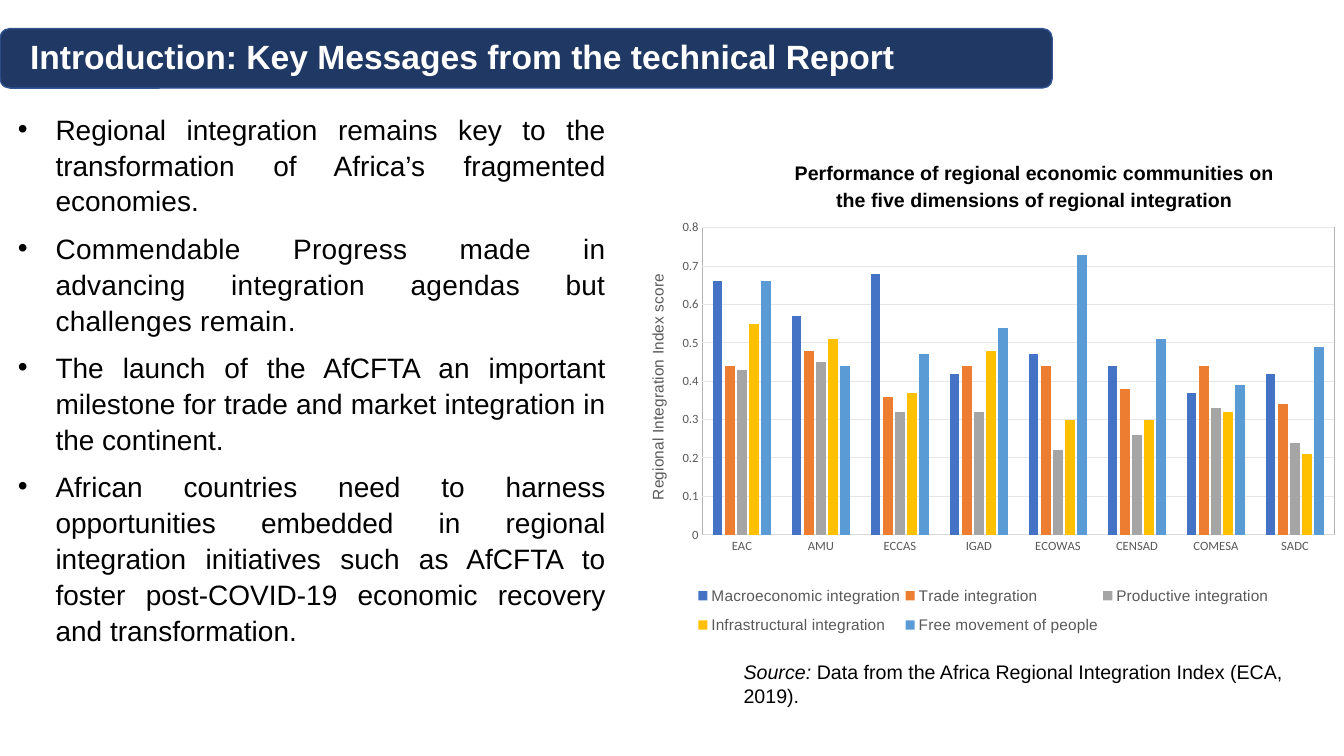
from lxml import etree
from pptx import Presentation
from pptx.chart.data import CategoryChartData
from pptx.dml.color import RGBColor
from pptx.enum.chart import XL_CHART_TYPE as ChartType, XL_LEGEND_POSITION as LegendPosition
from pptx.enum.chart import XL_TICK_MARK as TickMark
from pptx.enum.shapes import MSO_SHAPE as Shape
from pptx.enum.text import MSO_AUTO_SIZE as AutoSize, PP_ALIGN as Align
from pptx.oxml import parse_xml
from pptx.oxml.ns import nsdecls, qn
from pptx.util import Cm, Pt

NAVY = RGBColor(0x20, 0x38, 0x64)
NAVY_EDGE = RGBColor(0x32, 0x54, 0x91)
WHITE = RGBColor(0xFF, 0xFF, 0xFF)
BLACK = RGBColor(0, 0, 0)
GREY_TEXT = RGBColor(0x59, 0x59, 0x59)
AXIS_GREY = RGBColor(0xD9, 0xD9, 0xD9)
GRID_GREY = RGBColor(0xE7, 0xE6, 0xE6)
FRAME_GREY = RGBColor(0xB3, 0xB3, 0xB3)
BLUE = RGBColor(0x44, 0x72, 0xC4)
ORANGE = RGBColor(0xED, 0x7D, 0x31)
GREY = RGBColor(0xA5, 0xA5, 0xA5)
YELLOW = RGBColor(0xFF, 0xC0, 0x00)
SKY = RGBColor(0x5B, 0x9B, 0xD5)

COMMUNITIES = ["EAC", "AMU", "ECCAS", "IGAD", "ECOWAS", "CENSAD", "COMESA", "SADC"]
DIMENSIONS = [
    ("Macroeconomic integration", BLUE, [0.66, 0.57, 0.68, 0.42, 0.47, 0.44, 0.37, 0.42]),
    ("Trade integration", ORANGE, [0.44, 0.48, 0.36, 0.44, 0.44, 0.38, 0.44, 0.34]),
    ("Productive integration", GREY, [0.43, 0.45, 0.32, 0.32, 0.22, 0.26, 0.33, 0.24]),
    ("Infrastructural integration", YELLOW, [0.55, 0.51, 0.37, 0.48, 0.3, 0.3, 0.32, 0.21]),
    ("Free movement of people", SKY, [0.66, 0.44, 0.47, 0.54, 0.73, 0.51, 0.39, 0.49]),
]
# Each span: text, italic, letter spacing in hundredths of a point
MESSAGES = [
    [("Regional integration remains key to the transformation of Africa’s fragmented "
      "economies.", False, 0)],
    [("Commendable Progress made in advancing integration agendas but challenges remain",
      False, 20), (".", False, 0)],
    [("The launch of the AfCFTA an important milestone for trade and market integration "
      "in the continent.", False, 0)],
    [("African countries need to harness opportunities embedded in regional integration "
      "initiatives such as AfCFTA to foster post-COVID-19 economic recovery and "
      "transformation.", False, 0)],
]


def style_font(font, size, color, name="Arial", bold=False, italic=False):
    font.size, font.name, font.bold, font.italic = Pt(size), name, bold, italic
    font.color.rgb = color


def add_text(page, place, paragraphs, size, color=BLACK, bold=False, align=Align.LEFT,
             spacing=None, after=None, indent=0, bullet=False):
    """Add a text box; each paragraph is a list of (text, italic, letter spacing) spans."""
    box = page.shapes.add_textbox(*[Cm(length) for length in place])
    frame = box.text_frame
    frame.word_wrap = True
    frame.auto_size = AutoSize.SHAPE_TO_FIT_TEXT
    for index, spans in enumerate(paragraphs):
        para = frame.paragraphs[0] if index == 0 else frame.add_paragraph()
        properties = para._p.get_or_add_pPr()
        if indent:
            properties.set("marL", str(Cm(indent)))
        if bullet:
            properties.set("indent", str(-Cm(indent)))
            etree.SubElement(properties, qn("a:buFont")).set("typeface", "Arial")
            etree.SubElement(properties, qn("a:buChar")).set("char", "•")
        para.alignment = align
        if spacing:
            para.line_spacing = spacing
        if after:
            para.space_after = Pt(after)
        for text, italic, letter_spacing in spans:
            span = para.add_run()
            span.text = text
            style_font(span.font, size, color, bold=bold, italic=italic)
            if letter_spacing:
                span._r.get_or_add_rPr().set("spc", str(letter_spacing))


deck = Presentation()
deck.slide_width, deck.slide_height = Cm(33.87), Cm(19.05)
page = deck.slides.add_slide(deck.slide_layouts[6])

# Heading
banner = page.shapes.add_shape(Shape.ROUNDED_RECTANGLE, Cm(0), Cm(0.72), Cm(26.52), Cm(1.5))
banner.shadow.inherit = False
banner.fill.solid()
banner.fill.fore_color.rgb = NAVY
banner.line.color.rgb = NAVY_EDGE
banner.line.width = Pt(1)
add_text(page, (0.51, 0.79, 23.04, 1.27),
         [[("Introduction: Key Messages from the technical Report", False, 0)]],
         24, WHITE, bold=True)

# Chart
chart_data = CategoryChartData(number_format="General")
chart_data.categories = COMMUNITIES
for name, color, scores in DIMENSIONS:
    chart_data.add_series(name, scores)
chart = page.shapes.add_chart(ChartType.COLUMN_CLUSTERED, Cm(16.24), Cm(4.74),
                              Cm(17.62), Cm(11.76), chart_data).chart
style_font(chart.font, 10, BLACK, "Calibri")
chart.has_title = False
chart.has_legend = True
chart.legend.position = LegendPosition.BOTTOM
chart.legend.include_in_layout = False
style_font(chart.legend.font, 11, GREY_TEXT)

columns = chart.plots[0]
columns.vary_by_categories = False
columns.gap_width, columns.overlap = 219, -27
for series, (name, color, scores) in zip(columns.series, DIMENSIONS):
    series.format.fill.solid()
    series.format.fill.fore_color.rgb = color

community_axis, score_axis = chart.category_axis, chart.value_axis
for axis in (community_axis, score_axis):
    axis.major_tick_mark = axis.minor_tick_mark = TickMark.NONE
    style_font(axis.tick_labels.font, 9, GREY_TEXT, "Calibri")
community_axis.format.line.color.rgb = AXIS_GREY
community_axis.format.line.width = Pt(0.75)
score_axis.format.line.fill.background()
score_axis.minimum_scale, score_axis.maximum_scale, score_axis.major_unit = 0, 0.8, 0.1
score_axis.major_gridlines.format.line.color.rgb = GRID_GREY
score_axis.major_gridlines.format.line.width = Pt(0.75)
score_title = score_axis.axis_title.text_frame.paragraphs[0].add_run()
score_title.text = "Regional Integration Index score"
style_font(score_title.font, 11, GREY_TEXT)

plot_area = chart._chartSpace.chart.plotArea
legend = plot_area.getparent().find(qn("c:legend"))
for part, position, target, (x, y, width, height) in [
    (plot_area, 0, '<c:layoutTarget val="inner"/>', (0.083, 0.085, 0.904, 0.658)),
    (legend, 1, "", (0.07, 0.83, 0.83, 0.15)),
]:
    for layout in part.findall(qn("c:layout")):
        part.remove(layout)
    part.insert(position, parse_xml(
        f'<c:layout {nsdecls("c")}><c:manualLayout>{target}'
        f'<c:xMode val="edge"/><c:yMode val="edge"/><c:x val="{x}"/><c:y val="{y}"/>'
        f'<c:w val="{width}"/><c:h val="{height}"/></c:manualLayout></c:layout>'))
plot_area.append(parse_xml(
    f'<c:spPr {nsdecls("c", "a")}><a:noFill/><a:ln><a:solidFill>'
    f'<a:srgbClr val="{FRAME_GREY}"/></a:solidFill></a:ln></c:spPr>'))

# Messages, chart heading and source
add_text(page, (0.2, 2.64, 15.32, 15.04), MESSAGES,
         20, align=Align.JUSTIFY, spacing=1.07, after=8, indent=0.95, bullet=True)
add_text(page, (18.16, 3.84, 14.55, 1.63),
         [[("Performance of regional economic communities on the five dimensions "
            "of regional integration", False, 0)]],
         14, bold=True, align=Align.CENTER, spacing=1.15, after=8, indent=1.27)
add_text(page, (18.49, 16.51, 14.88, 2.24),
         [[("Source:", True, 0),
           (" Data from the Africa Regional Integration Index (ECA, 2019).", False, 0)]], 14)

deck.save("out.pptx")
